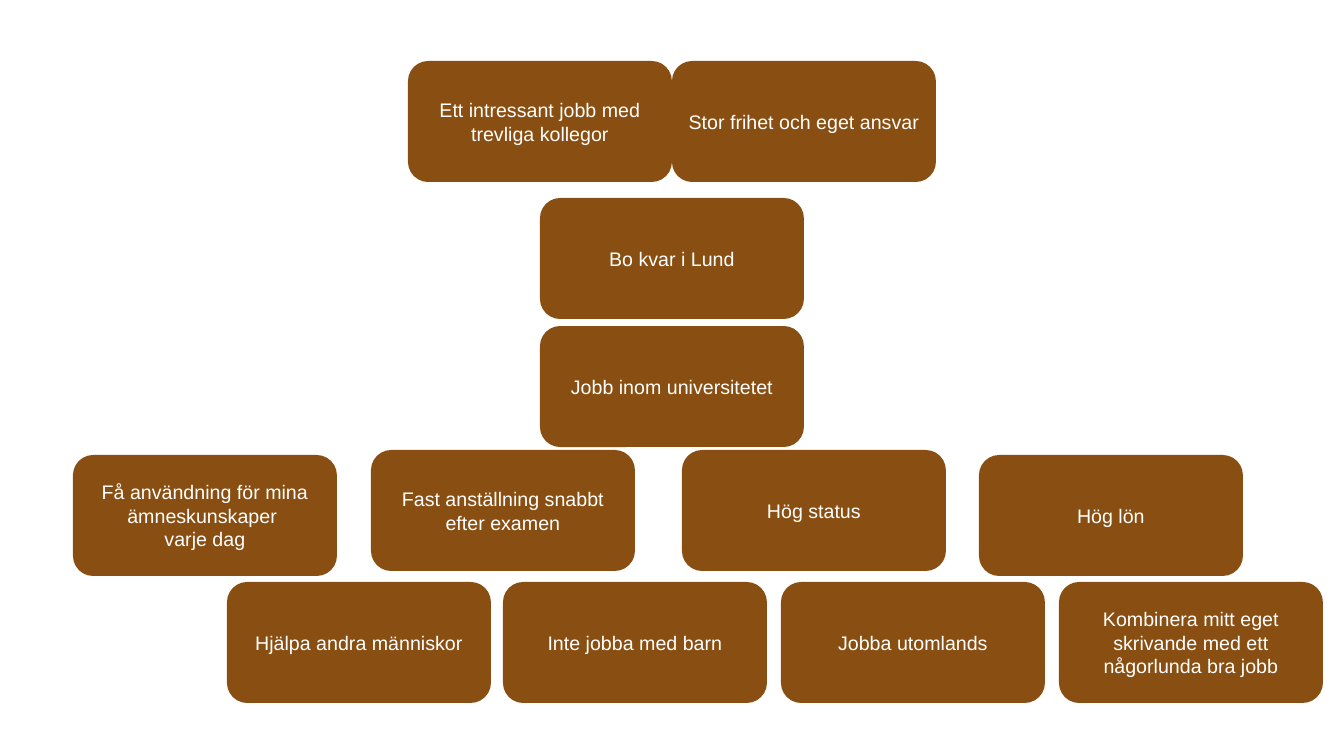
from pptx import Presentation
from pptx import util as u
from pptx.dml.color import RGBColor
from pptx.enum import shapes, text

PX = 914400 / 100.8
SLIDE_W, SLIDE_H = 1344, 756
CARD_W, CARD_H = 264, 121
BROWN = RGBColor(0x89, 0x4E, 0x11)
WHITE = RGBColor(0xFF, 0xFF, 0xFF)

MIDDLE = (SLIDE_W - CARD_W) // 2
TOP_Y, OUTER_Y, INNER_Y, BOTTOM_Y = 61, 455, 450, 582

# Left, top and wording of each wish, from most to least important
WISHES = [
    (SLIDE_W // 2 - CARD_W, TOP_Y, "Ett intressant jobb med trevliga kollegor"),
    (SLIDE_W // 2, TOP_Y, "Stor frihet och eget ansvar"),
    (MIDDLE, 198, "Bo kvar i Lund"),
    (MIDDLE, 326, "Jobb inom universitetet"),
    (73, OUTER_Y, "Få användning för mina ämneskunskaper \nvarje dag"),
    (371, INNER_Y, "Fast anställning snabbt efter examen"),
    (682, INNER_Y, "Hög status"),
    (979, OUTER_Y, "Hög lön"),
    (227, BOTTOM_Y, "Hjälpa andra människor"),
    (503, BOTTOM_Y, "Inte jobba med barn"),
    (781, BOTTOM_Y, "Jobba utomlands"),
    (1059, BOTTOM_Y, "Kombinera mitt eget skrivande med ett någorlunda bra jobb"),
]


def px(n):
    return u.Emu(round(n * PX))


def add_card(s, left, top, wording):
    sp = s.shapes.add_shape(shapes.MSO_SHAPE.ROUNDED_RECTANGLE,
                            px(left), px(top), px(CARD_W), px(CARD_H))
    sp.shadow.inherit = False
    sp.fill.solid()
    sp.fill.fore_color.rgb = BROWN
    sp.line.fill.background()
    tf = sp.text_frame
    tf.word_wrap = True
    tf.vertical_anchor = text.MSO_ANCHOR.MIDDLE
    tf.text = wording
    for p in tf.paragraphs:
        p.alignment = text.PP_ALIGN.CENTER
        p.font.name = "Arial"
        p.font.size = u.Pt(14)
        p.font.color.rgb = WHITE


def main():
    prs = Presentation()
    prs.slide_width, prs.slide_height = px(SLIDE_W), px(SLIDE_H)
    s = prs.slides.add_slide(prs.slide_layouts[6])
    for left, top, wording in WISHES:
        add_card(s, left, top, wording)
    prs.save("out.pptx")


if __name__ == "__main__":
    main()
